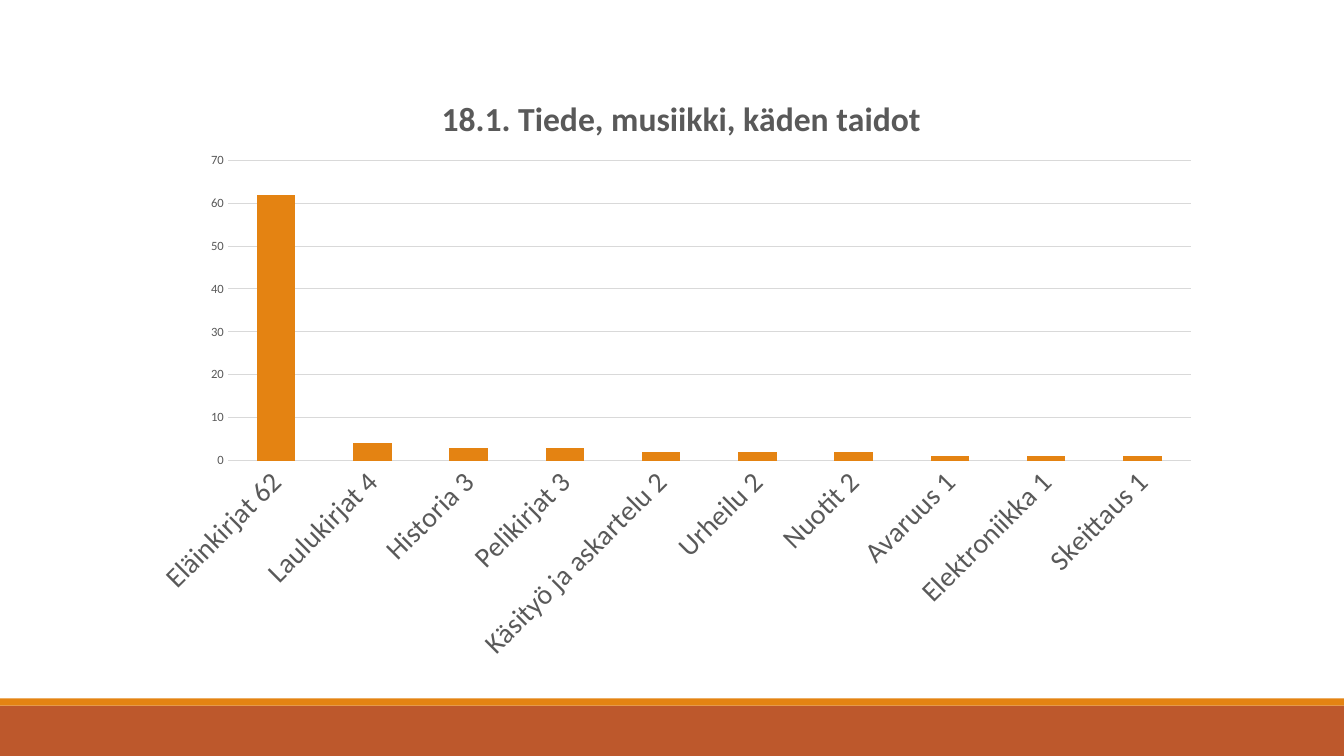
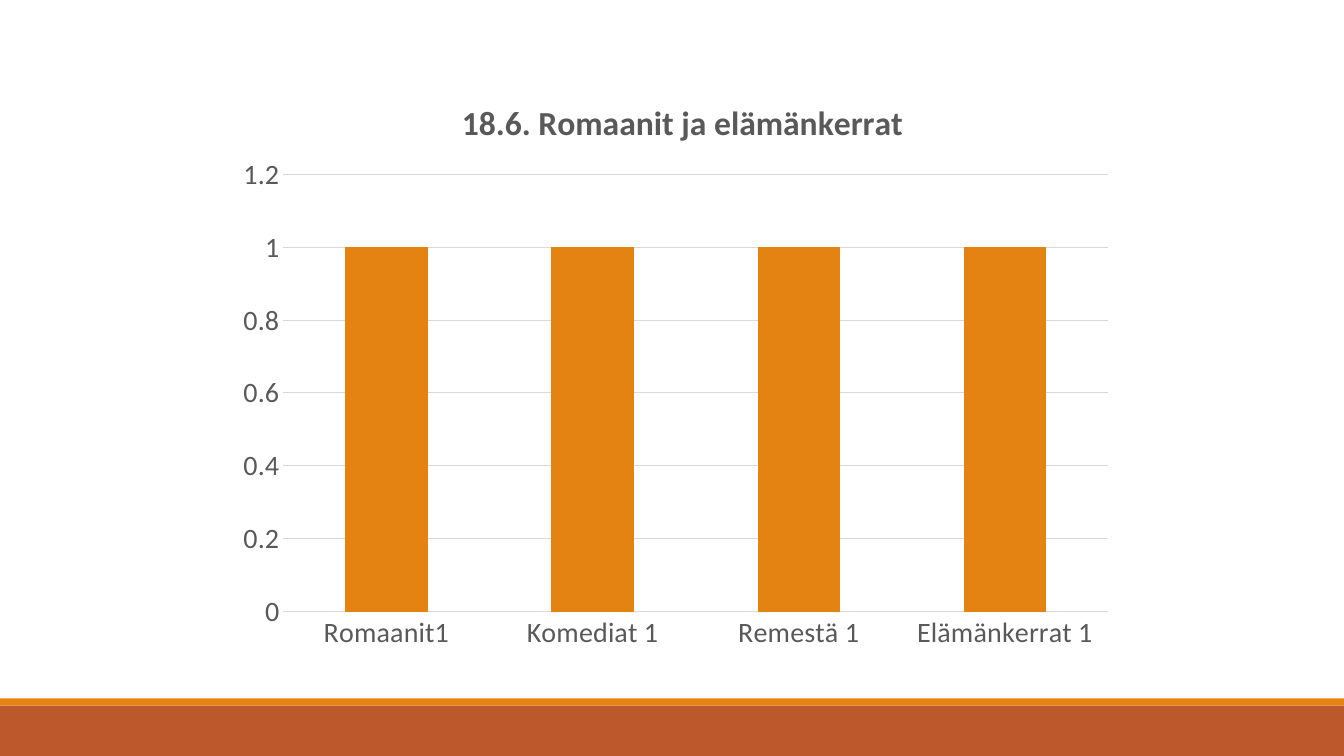
from typing import NamedTuple

from lxml.etree import SubElement
from pptx import Presentation
from pptx.chart.data import CategoryChartData
from pptx.dml.color import RGBColor
from pptx.enum.chart import XL_CHART_TYPE, XL_TICK_MARK
from pptx.enum.shapes import MSO_SHAPE
from pptx.oxml.ns import qn
from pptx.util import Inches, Pt

FONT = "Calibri"
ORANGE, RUST, GRAY, GRID = "E48312", "BD582C", "595959", "D9D9D9"
TITLE_SIZE, LABEL_SIZE = 24, 20


class Box(NamedTuple):
    left: float
    top: float
    width: float
    height: float


class Band(NamedTuple):
    box: Box
    color: str


class BarPage(NamedTuple):
    title: str
    frame: Box
    title_corner: tuple[float, float]
    plot: Box
    counts: dict[str, int]
    top_value: float
    step: float
    value_size: int
    label_angle: int = 0


BANDS = [
    Band(Box(0, 7, 13.33, 0.5), RUST),
    Band(Box(0, 6.93, 13.33, 0.07), ORANGE),
]

PAGES = [
    BarPage(
        title="18.1. Tiede, musiikki, käden taidot",
        frame=Box(1.35, 0.62, 10.68, 6.06),
        title_corner=(4.32, 0.89),
        plot=Box(2.26, 1.59, 9.55, 2.98),
        counts={
            "Eläinkirjat 62": 62,
            "Laulukirjat 4": 4,
            "Historia 3": 3,
            "Pelikirjat 3": 3,
            "Käsityö ja askartelu 2": 2,
            "Urheilu 2": 2,
            "Nuotit 2": 2,
            "Avaruus 1": 1,
            "Elektroniikka 1": 1,
            "Skeittaus 1": 1,
        },
        top_value=70,
        step=10,
        value_size=9,
        label_angle=-45,
    ),
    BarPage(
        title="18.6. Romaanit ja elämänkerrat",
        frame=Box(2.23, 0.66, 8.94, 5.91),
        title_corner=(4.52, 0.93),
        plot=Box(2.81, 1.73, 8.18, 4.34),
        counts={
            "Romaanit1": 1,
            "Komediat 1": 1,
            "Remestä 1": 1,
            "Elämänkerrat 1": 1,
        },
        top_value=1.2,
        step=0.2,
        value_size=LABEL_SIZE,
    ),
]


def rgb(color: str) -> RGBColor:
    return RGBColor.from_string(color)


def style_font(font, size: int, bold: bool = False) -> None:
    font.name = FONT
    font.size = Pt(size)
    font.bold = bold
    font.color.rgb = rgb(GRAY)


def add_band(slide, band: Band) -> None:
    shape = slide.shapes.add_shape(MSO_SHAPE.RECTANGLE, *map(Inches, band.box))
    shape.shadow.inherit = False
    shape.fill.solid()
    shape.fill.fore_color.rgb = rgb(band.color)
    shape.line.fill.background()


def place(element, settings: dict[str, object]) -> None:
    """Give a chart title or plot area a manual layout, after any c:tx."""
    for old in element.findall(qn("c:layout")):
        element.remove(old)
    layout = element.makeelement(qn("c:layout"))
    manual = SubElement(layout, qn("c:manualLayout"))
    for name, value in settings.items():
        SubElement(manual, qn(f"c:{name}")).set("val", str(value))
    element.insert(len(element.findall(qn("c:tx"))), layout)


def edge_layout(frame: Box, left: float, top: float) -> dict[str, object]:
    """Express a slide position as fractions of the chart frame."""
    return {
        "xMode": "edge",
        "yMode": "edge",
        "x": round((left - frame.left) / frame.width, 4),
        "y": round((top - frame.top) / frame.height, 4),
    }


def style_axis(axis, size: int) -> None:
    axis.major_tick_mark = XL_TICK_MARK.NONE
    axis.minor_tick_mark = XL_TICK_MARK.NONE
    axis.format.line.fill.background()
    style_font(axis.tick_labels.font, size)


def add_bar_chart(slide, page: BarPage) -> None:
    data = CategoryChartData()
    data.categories = list(page.counts)
    data.add_series("Series 1", list(page.counts.values()))
    chart = slide.shapes.add_chart(
        XL_CHART_TYPE.COLUMN_CLUSTERED, *map(Inches, page.frame), data
    ).chart
    chart.has_legend = False
    chart.font.name = FONT

    chart.has_title = True
    title = chart.chart_title
    title.include_in_layout = False
    paragraph = title.text_frame.paragraphs[0]
    paragraph.text = page.title
    style_font(paragraph.font, TITLE_SIZE, bold=True)

    bars = chart.plots[0]
    bars.gap_width = 150
    bars.vary_by_categories = False
    fill = bars.series[0].format.fill
    fill.solid()
    fill.fore_color.rgb = rgb(ORANGE)

    style_axis(chart.category_axis, LABEL_SIZE)
    if page.label_angle:
        body = chart.category_axis._element.find(f"{qn('c:txPr')}/{qn('a:bodyPr')}")
        body.set("rot", str(page.label_angle * 60000))
        body.set("vert", "horz")

    values = chart.value_axis
    style_axis(values, page.value_size)
    values.minimum_scale = 0
    values.maximum_scale = page.top_value
    values.major_unit = page.step
    grid = values.major_gridlines.format.line
    grid.color.rgb = rgb(GRID)
    grid.width = Pt(0.75)

    frame, plot = page.frame, page.plot
    place(title._element, edge_layout(frame, *page.title_corner))
    place(
        chart._chartSpace.find(f".//{qn('c:plotArea')}"),
        {
            "layoutTarget": "inner",
            **edge_layout(frame, plot.left, plot.top),
            "w": round(plot.width / frame.width, 4),
            "h": round(plot.height / frame.height, 4),
        },
    )


def main() -> None:
    deck = Presentation()
    deck.slide_width = Inches(13.33)
    deck.slide_height = Inches(7.5)
    blank = deck.slide_layouts[6]
    for page in PAGES:
        slide = deck.slides.add_slide(blank)
        for band in BANDS:
            add_band(slide, band)
        add_bar_chart(slide, page)
    deck.save("out.pptx")


if __name__ == "__main__":
    main()
